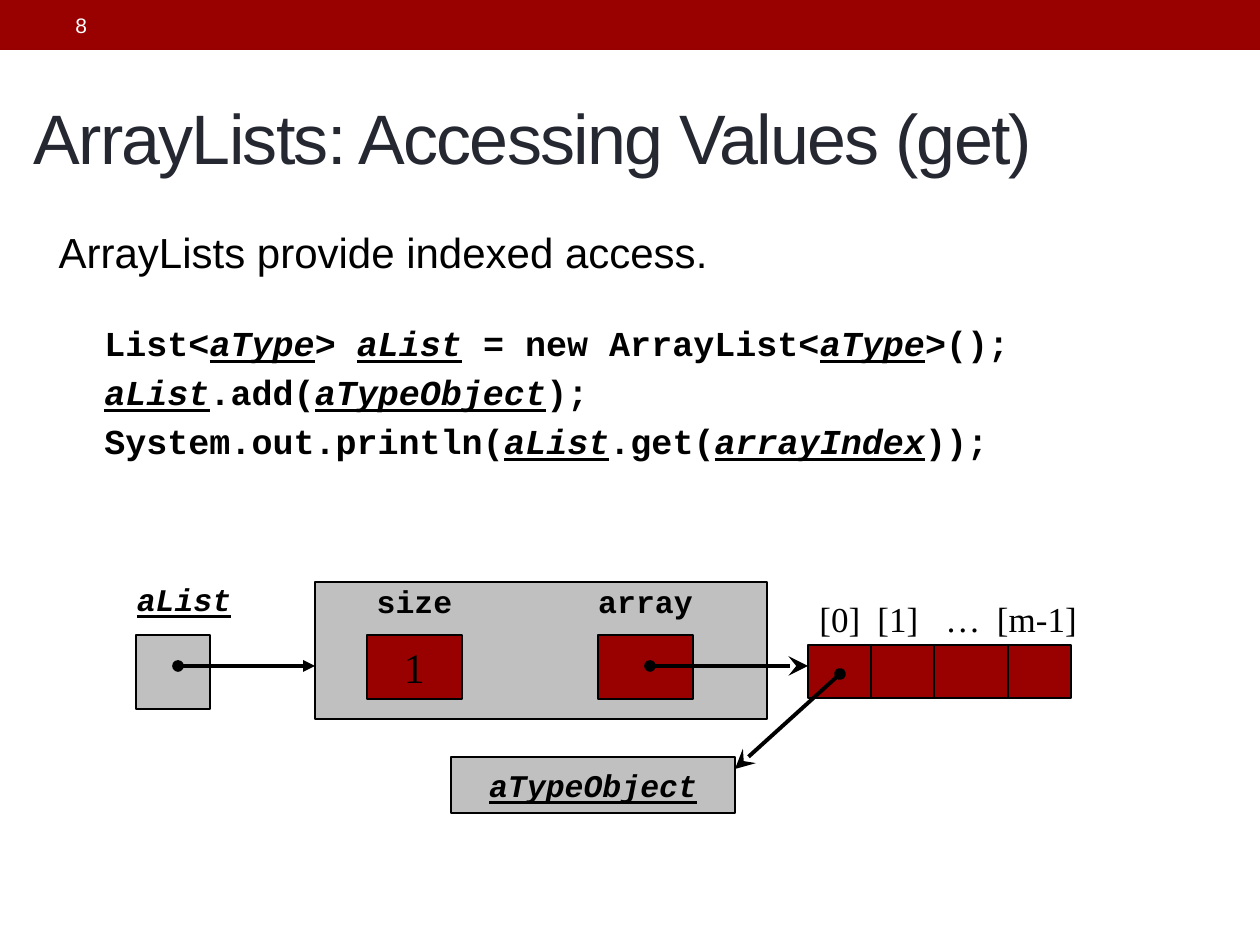
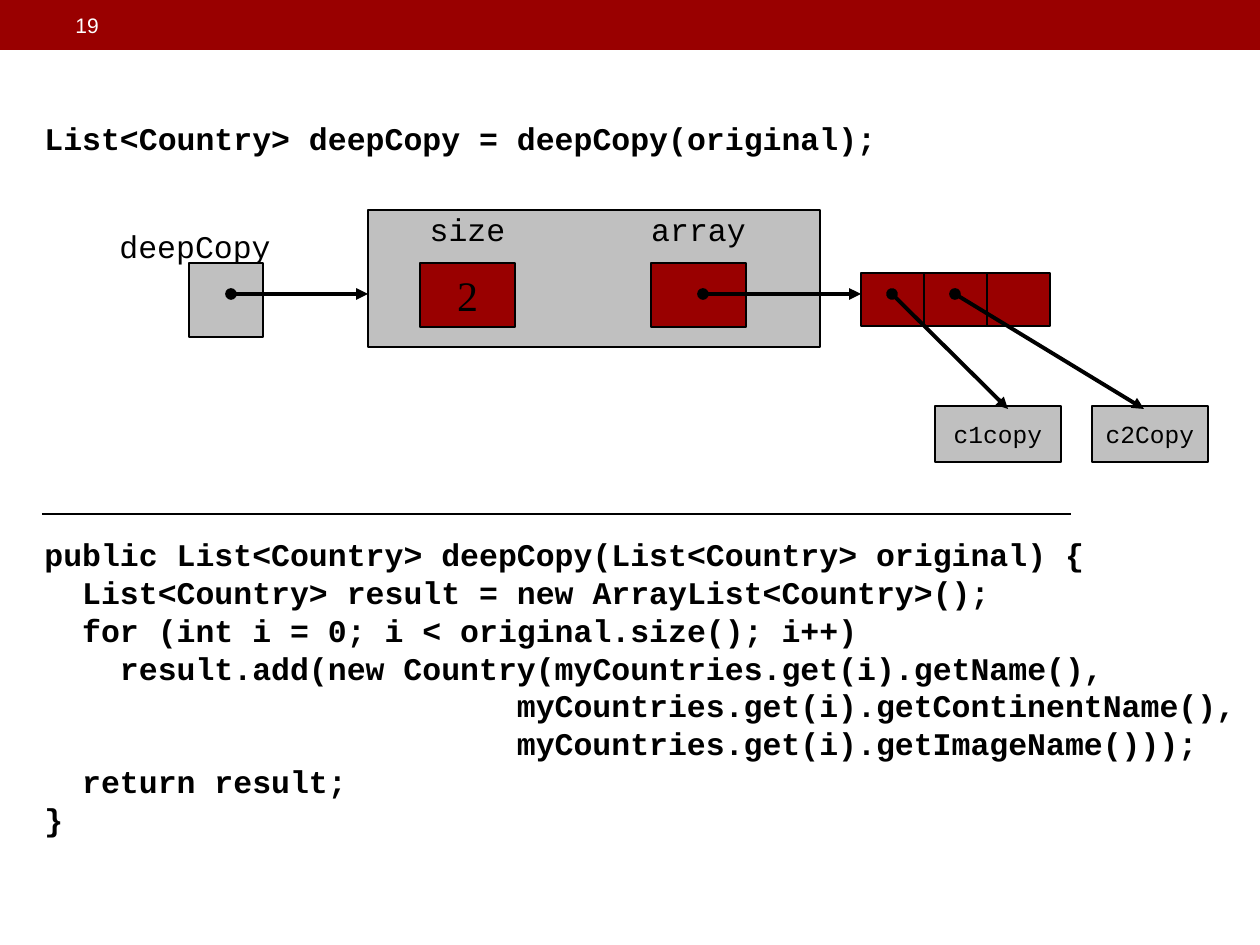
import dataclasses
import itertools

import pptx
import pptx.dml.color
import pptx.enum.shapes
import pptx.enum.text
import pptx.oxml
import pptx.oxml.ns
import pptx.util

EMU_PER_PX = 914400 / 126
ALIGN = pptx.enum.text.PP_ALIGN
ANCHOR = pptx.enum.text.MSO_ANCHOR


@dataclasses.dataclass(frozen=True)
class TextStyle:
    font: str
    size: int
    color: str = "000000"
    bold: bool = False
    emphasis: bool = False


@dataclasses.dataclass(frozen=True)
class Theme:
    red: str = "990000"
    grey: str = "C0C0C0"
    black: str = "000000"
    thin: float = 0.75
    thick: float = 2.25
    number: TextStyle = TextStyle("Arial", 12, "FFFFFF")
    title: TextStyle = TextStyle("Arial", 40, "252731")
    body: TextStyle = TextStyle("Arial", 24)
    syntax: TextStyle = TextStyle("Courier New", 20, bold=True)
    code: TextStyle = TextStyle("Courier New", 18, bold=True)
    label: TextStyle = TextStyle("Courier New", 18)
    variable: TextStyle = TextStyle("Courier New", 18, bold=True, emphasis=True)
    element: TextStyle = TextStyle("Courier New", 14)
    index: TextStyle = TextStyle("Times New Roman", 20)
    value: TextStyle = TextStyle("Times New Roman", 24)


THEME = Theme()


def px(length):
    return pptx.util.Emu(round(length * EMU_PER_PX))


def rgb(color):
    return pptx.dml.color.RGBColor.from_string(color)


def make_element(tag, **attributes):
    element = pptx.oxml.parse_xml(f"<{tag} {pptx.oxml.ns.nsdecls('a')}/>")
    for name, value in attributes.items():
        element.set(name, str(value))
    return element


def add_run(paragraph, text, style):
    run = paragraph.add_run()
    run.text = text
    font = run.font
    font.name, font.size, font.bold = style.font, pptx.util.Pt(style.size), style.bold
    font.italic = font.underline = style.emphasis
    font.color.rgb = rgb(style.color)
    return run


def set_space_before(paragraph, percent):
    spacing = make_element("a:spcBef")
    spacing.append(make_element("a:spcPct", val=percent * 1000))
    paragraph._p.get_or_add_pPr().insert(0, spacing)


def add_text_box(slide, left, top, width, height, anchor=ANCHOR.TOP):
    shape = slide.shapes.add_textbox(px(left), px(top), px(width), px(height))
    shape.text_frame.word_wrap = True
    shape.text_frame.vertical_anchor = anchor
    return shape.text_frame


def add_label(slide, left, top, width, text, style, align=ALIGN.CENTER):
    paragraph = add_text_box(slide, left, top, width, 50).paragraphs[0]
    paragraph.alignment = align
    set_space_before(paragraph, 50)
    add_run(paragraph, text, style)


def add_box(slide, left, top, width, height, fill, outlined=True):
    shape = slide.shapes.add_shape(
        pptx.enum.shapes.MSO_SHAPE.RECTANGLE, px(left), px(top), px(width), px(height))
    shape.shadow.inherit = False
    shape.fill.solid()
    shape.fill.fore_color.rgb = rgb(fill)
    if outlined:
        shape.line.color.rgb = rgb(THEME.black)
        shape.line.width = pptx.util.Pt(THEME.thin)
    else:
        shape.line.fill.background()
    return shape


def fill_box_text(shape, text, style, anchor, wrap):
    frame = shape.text_frame
    frame.word_wrap, frame.vertical_anchor = wrap, anchor
    frame.margin_bottom = px(6) if anchor == ANCHOR.MIDDLE else 0
    paragraph = frame.paragraphs[0]
    paragraph.alignment = ALIGN.CENTER
    set_space_before(paragraph, 50)
    add_run(paragraph, text, style)


def add_line(slide, start, end, weight=THEME.thin):
    connector = slide.shapes.add_connector(
        pptx.enum.shapes.MSO_CONNECTOR.STRAIGHT, *map(px, start + end))
    connector.line.color.rgb = rgb(THEME.black)
    connector.line.width = pptx.util.Pt(weight)
    connector.element.spPr.append(make_element("a:effectLst"))
    return connector


def add_pointer(slide, start, end, arrow="triangle"):
    connector = add_line(slide, start, end, THEME.thick)
    line = connector.element.spPr.find(pptx.oxml.ns.qn("a:ln"))
    size = "lg" if arrow == "stealth" else "med"
    line.append(make_element("a:headEnd", type="oval"))
    line.append(make_element("a:tailEnd", type=arrow, w=size, len=size))


def add_element_box(slide, left, top, width, text, style):
    shape = add_box(slide, left, top, width, 56, THEME.grey)
    fill_box_text(shape, text, style, ANCHOR.MIDDLE, False)


def draw_array(slide, left, top, cell_widths):
    height = 53
    add_box(slide, left, top, sum(cell_widths), height, THEME.red)
    for offset in itertools.accumulate(cell_widths[:-1]):
        add_line(slide, (left + offset, top), (left + offset, top + height))


def draw_array_list(slide, left, top, size, cell_widths, field_style, arrow):
    cell_top, cell_width, cell_height, label_width = top + 53, 95, 64, 126
    pointer_y, array_left = top + 84, left + 493
    add_box(slide, left - 179, cell_top, 74, 74, THEME.grey)
    add_box(slide, left, top, 452, 137, THEME.grey)
    cells = []
    for name, offset in (("size", 52), ("array", 283)):
        cells.append(add_box(slide, left + offset, cell_top, cell_width, cell_height, THEME.red))
        label_left = left + offset + (cell_width - label_width) / 2
        add_label(slide, label_left, top - 6, label_width, name, field_style)
    fill_box_text(cells[0], size, THEME.value, ANCHOR.TOP, True)
    draw_array(slide, array_left, top + 63, cell_widths)
    add_pointer(slide, (left - 137, pointer_y), (left, pointer_y))
    add_pointer(slide, (left + 335, pointer_y), (array_left, pointer_y), arrow)


def draw_index_labels(slide, left, top):
    width = 140
    for text, center in (("[0]", 31), ("[1]", 89), ("…", 154), ("[m-1]", 228)):
        add_label(slide, left + center - width / 2, top, width, text, THEME.index)


def write_syntax(slide, left, top, lines):
    frame = add_text_box(slide, left, top, 1147, 158)
    variable = dataclasses.replace(THEME.syntax, emphasis=True)
    for number, line in enumerate(lines):
        paragraph = frame.add_paragraph() if number else frame.paragraphs[0]
        set_space_before(paragraph, 20)
        for style, text in zip(itertools.cycle((THEME.syntax, variable)), line.split("|")):
            if text:
                add_run(paragraph, text, style)


def write_code(slide, left, top, lines):
    style = THEME.code
    frame = add_text_box(slide, left, top, 1228, 38 * len(lines) + 13)
    for number, (indent, text) in enumerate(lines):
        paragraph = frame.add_paragraph() if number else frame.paragraphs[0]
        paragraph.line_spacing = pptx.util.Pt(style.size * 1.2)
        properties = paragraph._p.get_or_add_pPr()
        properties.set("marL", str(pptx.util.Pt(indent * style.size * 0.6)))
        properties.set("indent", "0")
        add_run(paragraph, text, style)


def place(placeholder, left, top, width, height):
    placeholder.left, placeholder.top = px(left), px(top)
    placeholder.width, placeholder.height = px(width), px(height)
    return placeholder.text_frame.paragraphs[0]


def write_title(slide, text):
    paragraph = place(slide.shapes.title, 21, 63, 1218, 147)
    slide.shapes.title.text_frame.vertical_anchor = ANCHOR.MIDDLE
    paragraph.alignment = ALIGN.LEFT
    run = add_run(paragraph, text, THEME.title)
    run.font._element.set("spc", "-100")


def write_body(slide, text):
    paragraph = place(slide.placeholders[1], 21, 220, 1134, 651)
    properties = paragraph._p.get_or_add_pPr()
    properties.set("marL", str(px(25)))
    properties.set("indent", "0")
    properties.append(make_element("a:buNone"))
    add_run(paragraph, text, THEME.body)


def write_slide_number(slide, number):
    frame = add_text_box(slide, 63, 3, 399, 45, ANCHOR.MIDDLE)
    add_run(frame.paragraphs[0], number, THEME.number)


def add_master_band(presentation, slide):
    band = add_box(slide, 0, 0, 1260, 50, THEME.red, outlined=False)
    presentation.slide_master.shapes.element.insert(2, band.element)


def build_get_slide(slide):
    write_slide_number(slide, "8")
    write_title(slide, "ArrayLists: Accessing Values (get)")
    write_body(slide, "ArrayLists provide indexed access.")
    write_syntax(slide, 92, 315, (
        "List<|aType|> |aList| = new ArrayList<|aType|>();",
        "|aList|.add(|aTypeObject|);",
        "System.out.println(|aList|.get(|arrayIndex|));",
    ))
    left, top = 315, 582
    add_label(slide, left - 241, top - 8, 220, "aList", THEME.variable)
    draw_array_list(slide, left, top, "1", (63, 63, 74, 63), THEME.code, "stealth")
    draw_index_labels(slide, left + 494, top + 9)
    add_element_box(slide, left + 136, top + 175, 284, "aTypeObject", THEME.variable)
    add_pointer(slide, (left + 525, top + 92), (left + 420, top + 187), "stealth")


def build_deep_copy_slide(slide):
    write_slide_number(slide, "19")
    write_code(slide, 32, 113, ((0, "List<Country> deepCopy = deepCopy(original);"),))
    left, top = 368, 210
    add_label(slide, left - 274, top + 11, 189, "deepCopy", THEME.label, ALIGN.RIGHT)
    draw_array_list(slide, left, top, "2", (63, 63, 63), THEME.label, "triangle")
    for text, box_left, width, start, end in (
        ("c1copy", 567, 126, 524, 640), ("c2Copy", 724, 116, 587, 776),
    ):
        add_element_box(slide, left + box_left, top + 196, width, text, THEME.element)
        add_pointer(slide, (left + start, top + 84), (left + end, top + 199))
    add_line(slide, (42, 514), (1071, 514))
    write_code(slide, 32, 529, (
        (0, "public List<Country> deepCopy(List<Country> original) {"),
        (2, "List<Country> result = new ArrayList<Country>();"),
        (2, "for (int i = 0; i < original.size(); i++)"),
        (4, "result.add(new Country(myCountries.get(i).getName(),"),
        (25, "myCountries.get(i).getContinentName(),"),
        (25, "myCountries.get(i).getImageName()));"),
        (2, "return result;"),
        (0, "}"),
    ))


def main():
    presentation = pptx.Presentation()
    presentation.slide_width, presentation.slide_height = px(1260), px(945)
    get_slide = presentation.slides.add_slide(presentation.slide_layouts[1])
    deep_copy_slide = presentation.slides.add_slide(presentation.slide_layouts[6])
    add_master_band(presentation, get_slide)
    build_get_slide(get_slide)
    build_deep_copy_slide(deep_copy_slide)
    presentation.save("out.pptx")


if __name__ == "__main__":
    main()
